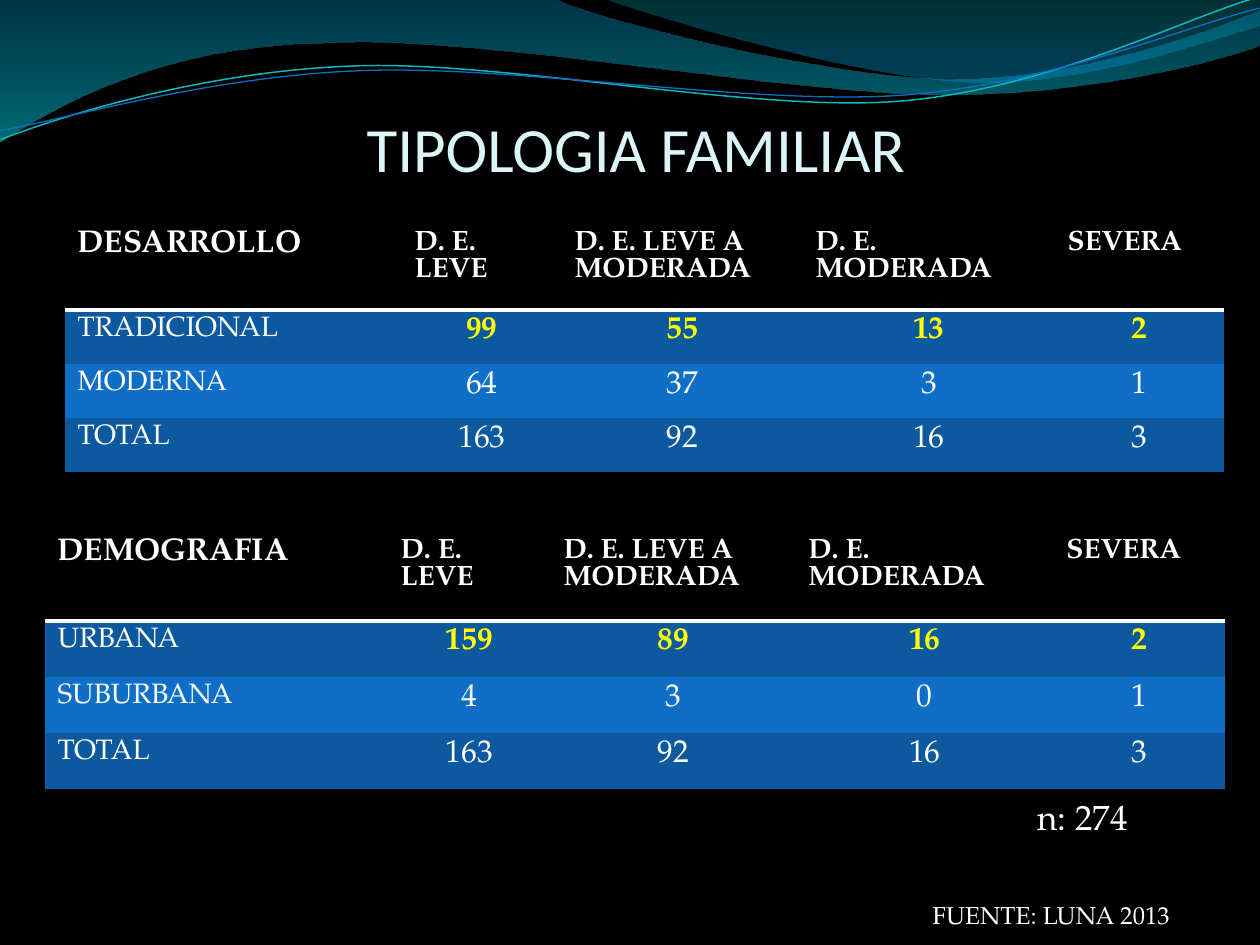
from lxml import etree
from pptx import Presentation
from pptx import util as u
from pptx.dml.color import RGBColor
from pptx.enum import text
from pptx.oxml import ns

SCALE = 914400 / 126
SERIF, SANS = "TeX Gyre Pagella", "Calibri"
NO_GRID_STYLE = "{2D5ABB26-0587-4C30-8999-92F81FD0307C}"
LINE_TILT = 357.3

BLACK = RGBColor(0x00, 0x00, 0x00)
WHITE = RGBColor(0xFF, 0xFF, 0xFF)
YELLOW = RGBColor(0xFF, 0xFF, 0x00)
ICE = RGBColor(0xDB, 0xF5, 0xF9)
BLUE = RGBColor(0x0F, 0x6F, 0xC6)
DARK_BLUE = RGBColor(0x0C, 0x59, 0x9F)
TURQUOISE = RGBColor(0x0A, 0xB8, 0xBF)
DEEP_BLUE = RGBColor(0x00, 0x74, 0xA1)
CYAN = RGBColor(0x00, 0xC6, 0xCF)
TEAL = RGBColor(0x00, 0xA1, 0xA9)
SEA_BLUE = RGBColor(0x00, 0x8B, 0xBF)

# Each outline is a start point and steps: one point is a line, three a Bezier curve.
LONG_WAVE = (0, 0), [
    [(554, -1)],
    [(600, 21), (837, 79), (955, 79)],
    [(1075, 79), (1207, 33), (1260, 11)],
    [(1261, 45)],
    [(1239, 55), (1096, 96), (940, 94)],
    [(784, 94), (481, 35), (324, 43)],
    [(163, 45), (58, 105), (-1, 142)],
]
RIGHT_WAVE = (604, -1), [
    [(641, 14), (859, 78), (969, 82)],
    [(1079, 87), (1211, 40), (1260, 26)],
    [(1260, 0)],
]
# The two lines are given before their tilt.
TURQUOISE_LINE = (-2, 110), [
    [(58, 90), (199, 52), (350, 53)],
    [(499, 53), (745, 118), (896, 114)],
    [(1048, 109), (1184, 45), (1260, 27)],
]
BLUE_LINE = (-2, 101), [
    [(57, 94), (207, 57), (357, 58)],
    [(509, 58), (750, 112), (902, 108)],
    [(1052, 104), (1188, 52), (1262, 38)],
]

LEVELS = ["D. E.  LEVE", "D. E. LEVE A MODERADA", "D. E. MODERADA", "SEVERA"]
DEVELOPMENT = [
    ["DESARROLLO", *LEVELS],
    ["TRADICIONAL", 99, 55, 13, 2],
    ["MODERNA", 64, 37, 3, 1],
    ["TOTAL", 163, 92, 16, 3],
]
DEMOGRAPHY = [
    ["DEMOGRAFIA", *LEVELS],
    ["URBANA", 159, 89, 16, 2],
    ["SUBURBANA", 4, 3, 0, 1],
    ["TOTAL", 163, 92, 16, 3],
]


def px(n):
    return u.Emu(round(n * SCALE))


def add_outline(s, outline, close):
    """Build a freeform, then turn each three-point step into a Bezier curve."""
    start, steps = outline
    points = [(px(x), px(y)) for x, y in [start, *sum(steps, [])]]
    builder = s.shapes.build_freeform(*points[0], scale=1.0)
    builder.add_line_segments(points[1:], close=close)
    sp = builder.convert_to_shape()
    sp.shadow.inherit = False
    segments = iter(list(sp._element.iter(ns.qn("a:lnTo"))))
    for step in steps:
        group = [next(segments) for _ in step]
        if len(group) == 3:
            curve = etree.Element(ns.qn("a:cubicBezTo"))
            group[0].addprevious(curve)
            for segment in group:
                curve.append(segment[0])
                segment.getparent().remove(segment)
    return sp


def add_wave(s, outline, stops):
    """Draw a closed wave; stops are (position, colour, opacity percent)."""
    sp = add_outline(s, outline, close=True)
    sp.line.fill.background()
    sp.fill.gradient()
    sp.fill.gradient_angle = 270
    for stop, (position, colour, _) in zip(sp.fill.gradient_stops, stops):
        stop.position = position
        stop.color.rgb = colour
    colours = sp._element.spPr.iter(ns.qn("a:srgbClr"))
    for element, (_, _, opacity) in zip(colours, stops):
        etree.SubElement(element, ns.qn("a:alpha"), val=str(opacity * 1000))


def add_wave_line(s, outline, colour, width):
    sp = add_outline(s, outline, close=False)
    sp.rotation = LINE_TILT
    sp.fill.background()
    sp.line.color.rgb = colour
    sp.line.width = u.Pt(width)


def format_font(p, size, colour, name=SERIF, bold=False):
    font = p.font
    font.name, font.size, font.bold = name, u.Pt(size), bold
    font.color.rgb = colour


def format_title(title):
    title.left, title.top, title.width, title.height = px(64), px(67), px(1144), px(118)
    tf = title.text_frame
    tf.text = "TIPOLOGIA FAMILIAR"
    tf.vertical_anchor = text.MSO_ANCHOR.BOTTOM
    tf.margin_left = tf.margin_right = tf.margin_bottom = 0
    p = tf.paragraphs[0]
    p.alignment = text.PP_ALIGN.CENTER
    format_font(p, 36, ICE, SANS)


def add_bottom_border(cell, colour, width):
    line = etree.Element(ns.qn("a:lnB"), w=str(u.Pt(width)))
    fill = etree.SubElement(line, ns.qn("a:solidFill"))
    etree.SubElement(fill, ns.qn("a:srgbClr"), val=str(colour))
    cell._tc.get_or_add_tcPr().insert(0, line)


def format_cell(cell, row, col, value):
    cell.text = str(value)
    cell.fill.solid()
    cell.fill.fore_color.rgb = (BLACK, DARK_BLUE, BLUE, DARK_BLUE)[row]
    p = cell.text_frame.paragraphs[0]
    is_header, is_number = row == 0, row > 0 and col > 0
    is_highlight = row == 1 and is_number
    size = 18 if is_number or row == col == 0 else 16
    format_font(p, size, YELLOW if is_highlight else WHITE, bold=is_header or is_highlight)
    if is_number:
        p.alignment = text.PP_ALIGN.CENTER
    if is_header:
        add_bottom_border(cell, WHITE, 2)


def add_typology_table(s, left, top, col_widths, header_height, row_height, data):
    heights = [header_height] + [row_height] * (len(data) - 1)
    frame = s.shapes.add_table(len(data), len(col_widths), px(left), px(top),
                               px(sum(col_widths)), px(sum(heights)))
    table = frame.table
    table._tbl.tblPr.find(ns.qn("a:tableStyleId")).text = NO_GRID_STYLE
    for column, width in zip(table.columns, col_widths):
        column.width = px(width)
    for row, (height, values) in enumerate(zip(heights, data)):
        table.rows[row].height = px(height)
        for col, value in enumerate(values):
            format_cell(table.cell(row, col), row, col, value)


def add_note(s, left, top, width, height, content, size):
    tf = s.shapes.add_textbox(px(left), px(top), px(width), px(height)).text_frame
    tf.word_wrap = True
    tf.text = content
    format_font(tf.paragraphs[0], size, WHITE)


def main():
    prs = Presentation()
    prs.slide_width, prs.slide_height = px(1260), px(945)
    s = prs.slides.add_slide(prs.slide_layouts[5])
    s.background.fill.solid()
    s.background.fill.fore_color.rgb = BLACK

    add_wave(s, LONG_WAVE, [(0, DEEP_BLUE, 45), (1, CYAN, 55)])
    add_wave(s, RIGHT_WAVE, [(0, TEAL, 30), (0.8, SEA_BLUE, 45)])
    add_wave_line(s, TURQUOISE_LINE, TURQUOISE, 0.85)
    add_wave_line(s, BLUE_LINE, BLUE, 0.75)

    title = s.shapes.title
    s.shapes[-1]._element.addnext(title._element)  # in front of the waves
    format_title(title)
    add_typology_table(s, 65, 224, [337, 160, 241, 252, 169], 86, 54, DEVELOPMENT)
    add_typology_table(s, 45, 532, [343, 163, 245, 258, 171], 89, 56, DEMOGRAPHY)
    add_note(s, 1025, 789, 159, 55, "n: 274", 20)
    add_note(s, 920, 894, 306, 43, "FUENTE: LUNA 2013", 14)
    prs.save("out.pptx")


if __name__ == "__main__":
    main()
